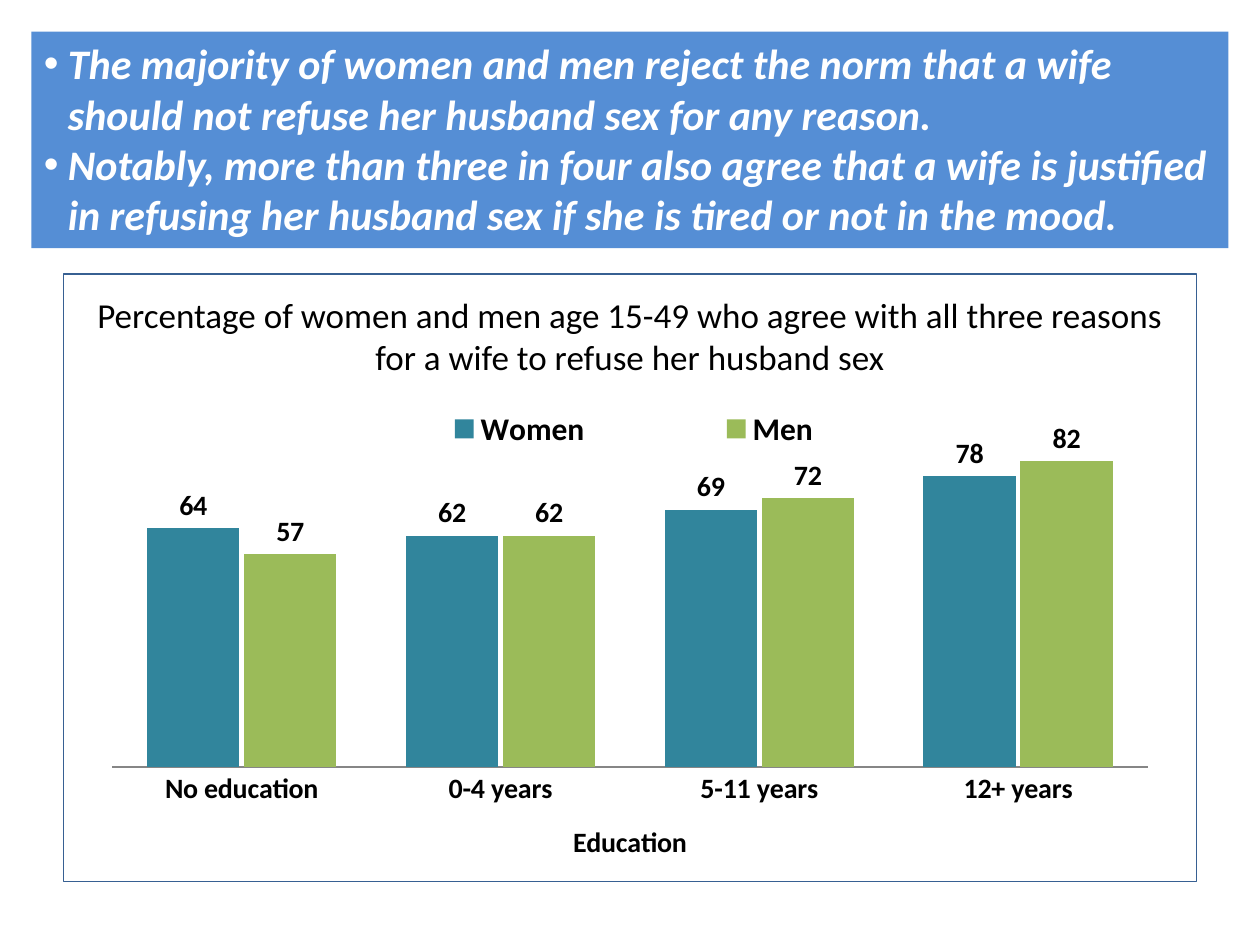
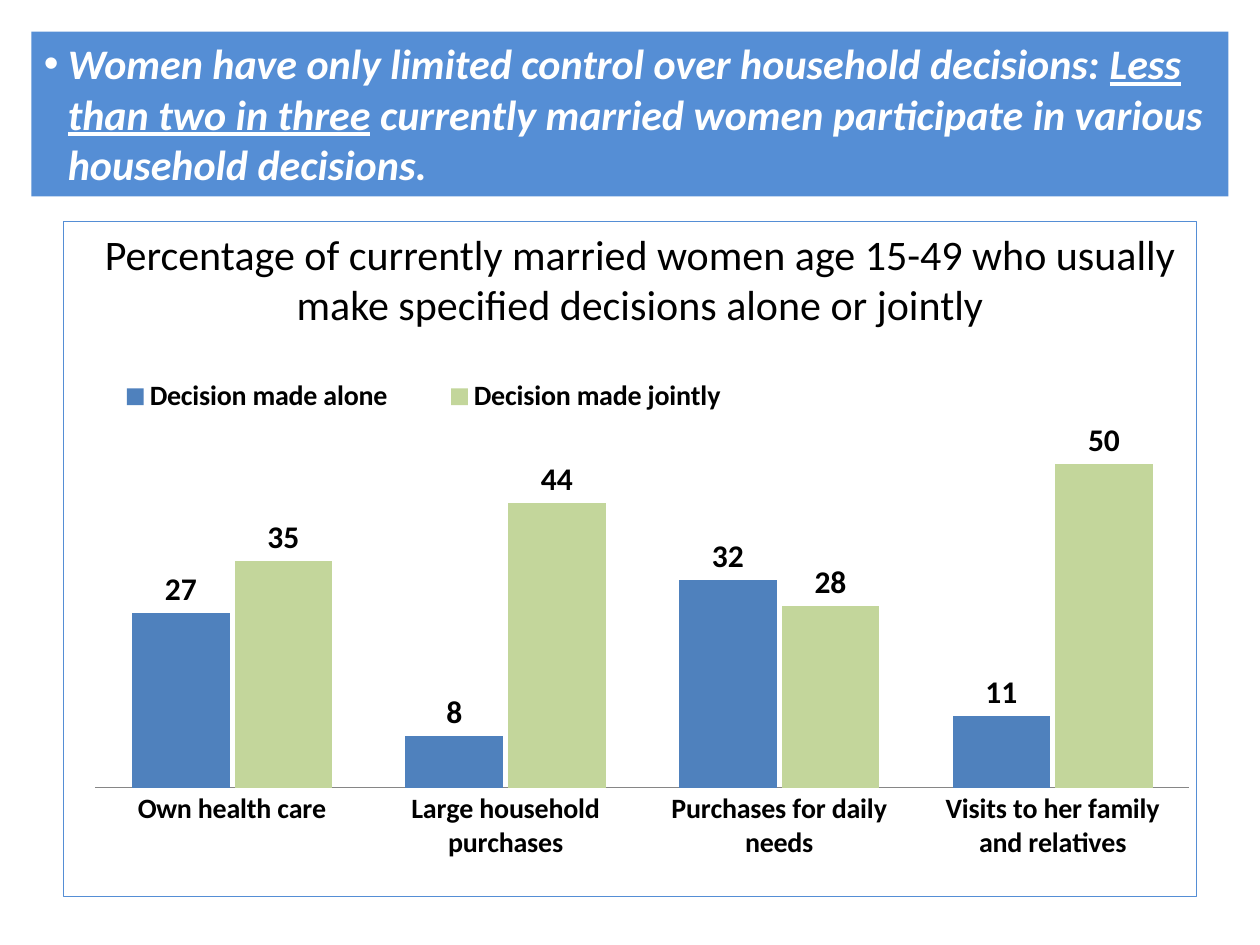
from pptx import Presentation
from pptx import util as u
from pptx.chart.data import CategoryChartData
from pptx.dml.color import RGBColor
from pptx.enum import chart as ch, shapes, text
from pptx.oxml import parse_xml
from pptx.oxml.ns import nsdecls

PX = 9144
FONT = "Calibri"
WHITE = RGBColor(0xFF, 0xFF, 0xFF)
BLACK = RGBColor(0, 0, 0)
BANNER_BLUE = RGBColor(0x55, 0x8E, 0xD5)
FRAME_NAVY = RGBColor(0x37, 0x60, 0x92)
AXIS_GREY = RGBColor(0x86, 0x86, 0x86)
TEAL = RGBColor(0x31, 0x85, 0x9C)
GREEN = RGBColor(0x9B, 0xBB, 0x59)
BLUE = RGBColor(0x4F, 0x81, 0xBD)
PALE_GREEN = RGBColor(0xC3, 0xD6, 0x9B)

BANNER_TEXT = dict(name=FONT, size=u.Pt(24), bold=True, italic=True)

SLIDES = [
    dict(
        banner=((25, 25, 950, 172), [
            [("The majority of women and men reject the norm that a wife should "
              "not refuse her husband sex for any reason.", False)],
            [("Notably, more than three in four also agree that a wife is justified "
              "in refusing her husband sex if she is tired or not in the mood.", False)],
        ]),
        title=((50, 208, 900, 117), 20,
               "Percentage of women and men age 15-49 who agree with all three "
               "reasons for a wife to refuse her husband sex"),
        chart=dict(
            box=(50, 217, 900, 483), frame=FRAME_NAVY, top_value=90,
            plot=(0.043, 0.259, 0.914, 0.553), key=(0.229, 0.22, 0.549, 0.07),
            key_size=18, label_size=16, axis_title="Education",
            categories=["No education", "0-4 years", "5-11 years", "12+ years"],
            series=[("Women", (64, 62, 69, 78), TEAL),
                    ("Men", (57, 62, 72, 82), GREEN)]),
    ),
    dict(
        banner=((25, 25, 950, 131), [
            [("Women have only limited control over household decisions: ", False),
             ("Less than two in three", True),
             (" currently married women participate in various household decisions.",
              False)],
        ]),
        title=((58, 175, 900, 92), 24,
               "Percentage of currently married women age 15-49 who usually make "
               "specified decisions alone or jointly"),
        chart=dict(
            box=(50, 175, 900, 537), frame=BANNER_BLUE, top_value=60,
            plot=(0.028, 0.264, 0.966, 0.575), key=(0.008, 0.22, 0.62, 0.08),
            key_size=16, label_size=18, axis_title=None,
            categories=["Own health care", "Large household purchases",
                        "Purchases for daily needs",
                        "Visits to her family and relatives"],
            series=[("Decision made alone", (27, 8, 32, 11), BLUE),
                    ("Decision made jointly", (35, 44, 28, 50), PALE_GREEN)]),
    ),
]


def emu(box):
    """Turn a box in px into EMU."""
    return [u.Emu(v * PX) for v in box]


def assign(obj, **values):
    """Set each named attribute on an object."""
    for name, value in values.items():
        setattr(obj, name, value)


def style(font, color, **values):
    """Apply a colour and format values to a font."""
    font.color.rgb = color
    assign(font, **values)


def add_title(s, box, size, words):
    """Place the centred chart heading."""
    tf = s.shapes.add_textbox(*emu(box)).text_frame
    assign(tf, word_wrap=True, vertical_anchor=text.MSO_ANCHOR.MIDDLE)
    p = tf.paragraphs[0]
    p.alignment = text.PP_ALIGN.CENTER
    r = p.add_run()
    r.text = words
    style(r.font, BLACK, name=FONT, size=u.Pt(size))


def add_bullet(p):
    """Give a paragraph a hanging round bullet."""
    pPr = p._p.get_or_add_pPr()
    indent = u.Inches(0.19)
    pPr.set("marL", str(indent))
    pPr.set("indent", str(-indent))
    pPr.append(parse_xml(f'<a:buFont {nsdecls("a")} typeface="Arial"/>'))
    pPr.append(parse_xml(f'<a:buChar {nsdecls("a")} char="•"/>'))


def add_banner(s, box, points):
    """Draw the blue band holding the key messages."""
    sp = s.shapes.add_shape(shapes.MSO_SHAPE.RECTANGLE, *emu(box))
    sp.shadow.inherit = False
    sp.fill.solid()
    sp.fill.fore_color.rgb = BANNER_BLUE
    sp.line.fill.background()
    tf = sp.text_frame
    assign(tf, word_wrap=True, vertical_anchor=text.MSO_ANCHOR.TOP,
           auto_size=text.MSO_AUTO_SIZE.SHAPE_TO_FIT_TEXT)
    for i, runs in enumerate(points):
        p = tf.add_paragraph() if i else tf.paragraphs[0]
        p.alignment = text.PP_ALIGN.LEFT
        add_bullet(p)
        for words, underline in runs:
            r = p.add_run()
            r.text = words
            style(r.font, WHITE, underline=underline, **BANNER_TEXT)


def layout_xml(fractions, target=""):
    """Return a manual chart layout for x, y, width and height."""
    x, y, w, h = fractions
    return parse_xml(
        f'<c:layout {nsdecls("c")}><c:manualLayout>{target}'
        '<c:xMode val="edge"/><c:yMode val="edge"/>'
        f'<c:x val="{x}"/><c:y val="{y}"/><c:w val="{w}"/><c:h val="{h}"/>'
        '</c:manualLayout></c:layout>')


def arrange_chart(chart, plot, key, frame):
    """Fix the plot and legend areas and draw a frame without fill."""
    root = chart.element
    for old in root.xpath("c:chart/c:plotArea/c:layout | c:chart/c:legend/c:layout"):
        old.getparent().remove(old)
    inner = '<c:layoutTarget val="inner"/>'
    root.xpath("c:chart/c:plotArea")[0].insert(0, layout_xml(plot, inner))
    root.xpath("c:chart/c:legend/c:legendPos")[0].addnext(layout_xml(key))
    root.xpath("c:chart")[0].addnext(parse_xml(
        f'<c:spPr {nsdecls("c", "a")}><a:noFill/><a:ln w="9525"><a:solidFill>'
        f'<a:srgbClr val="{frame}"/></a:solidFill></a:ln></c:spPr>'))


def add_column_chart(s, box, frame, top_value, plot, key, key_size, label_size,
                     axis_title, categories, series):
    """Place the framed two-series column chart."""
    data = CategoryChartData(number_format="0")
    data.categories = categories
    for name, values, _ in series:
        data.add_series(name, values)
    kind = ch.XL_CHART_TYPE.COLUMN_CLUSTERED
    chart = s.shapes.add_chart(kind, *emu(box), data).chart
    style(chart.font, BLACK, name=FONT, size=u.Pt(10))
    assign(chart, has_title=False, has_legend=True)
    assign(chart.legend, position=ch.XL_LEGEND_POSITION.TOP, include_in_layout=False)
    style(chart.legend.font, BLACK, name=FONT, size=u.Pt(key_size), bold=True)

    assign(chart.value_axis, visible=False, has_major_gridlines=False,
           minimum_scale=0, maximum_scale=top_value)
    axis = chart.category_axis
    assign(axis, major_tick_mark=ch.XL_TICK_MARK.NONE,
           minor_tick_mark=ch.XL_TICK_MARK.NONE)
    axis.format.line.color.rgb = AXIS_GREY
    axis.format.line.width = u.Pt(0.75)
    bold_16 = dict(name=FONT, size=u.Pt(16), bold=True)
    style(axis.tick_labels.font, BLACK, **bold_16)
    if axis_title:
        r = axis.axis_title.text_frame.paragraphs[0].add_run()
        r.text = axis_title
        style(r.font, BLACK, **bold_16)

    bars = chart.plots[0]
    assign(bars, gap_width=75, overlap=-5, vary_by_categories=False)
    for column, (_, _, color) in zip(bars.series, series):
        column.format.fill.solid()
        column.format.fill.fore_color.rgb = color
        labels = column.data_labels
        assign(labels, show_value=True, number_format="0",
               number_format_is_linked=False,
               position=ch.XL_LABEL_POSITION.OUTSIDE_END)
        style(labels.font, BLACK, name=FONT, size=u.Pt(label_size), bold=True)
    arrange_chart(chart, plot, key, frame)


def main():
    """Build the slides and save the presentation."""
    prs = Presentation()
    prs.slide_width, prs.slide_height = emu((1000, 750))
    for content in SLIDES:
        s = prs.slides.add_slide(prs.slide_layouts[6])
        add_title(s, *content["title"])
        add_column_chart(s, **content["chart"])
        add_banner(s, *content["banner"])
    prs.save("out.pptx")


if __name__ == "__main__":
    main()
